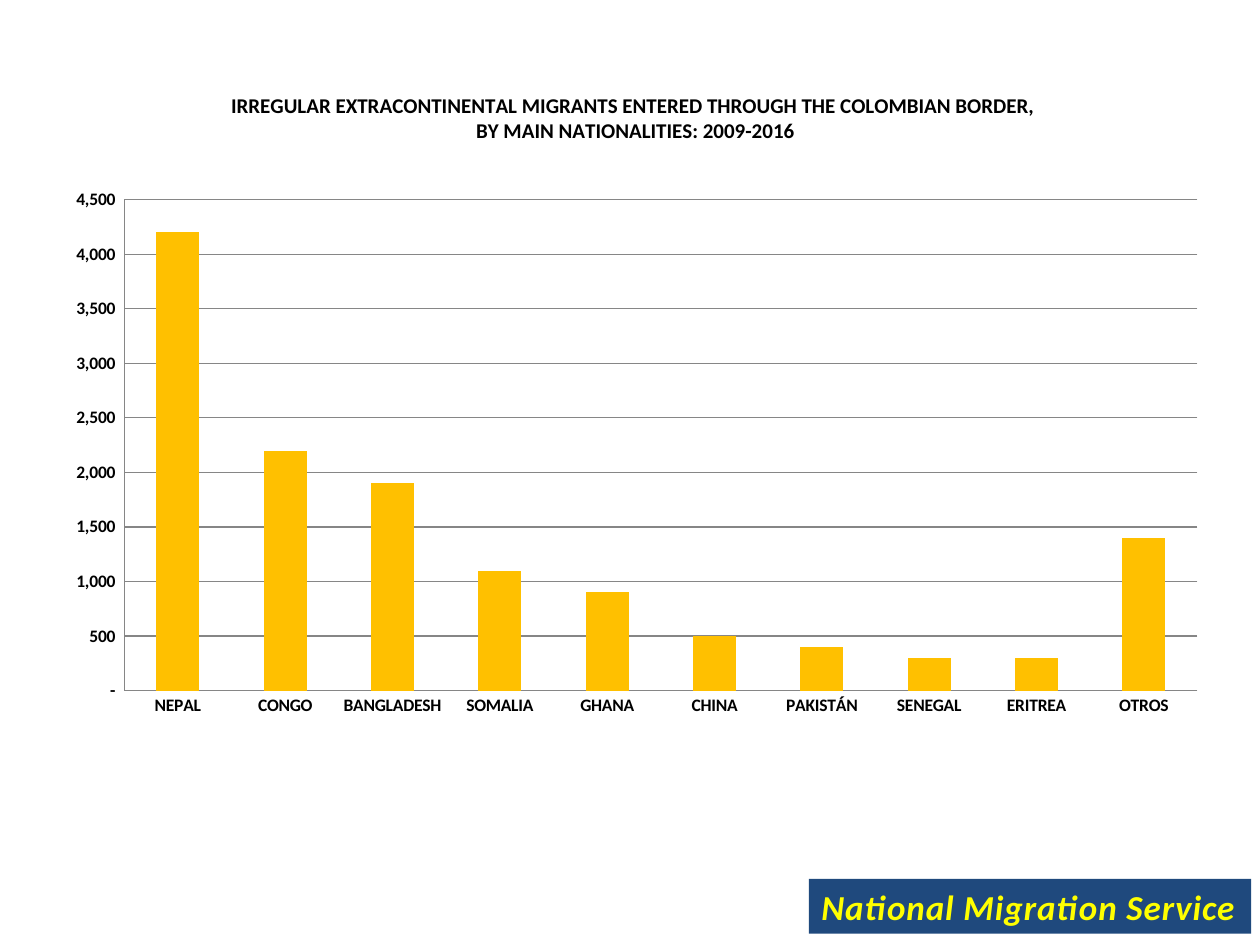
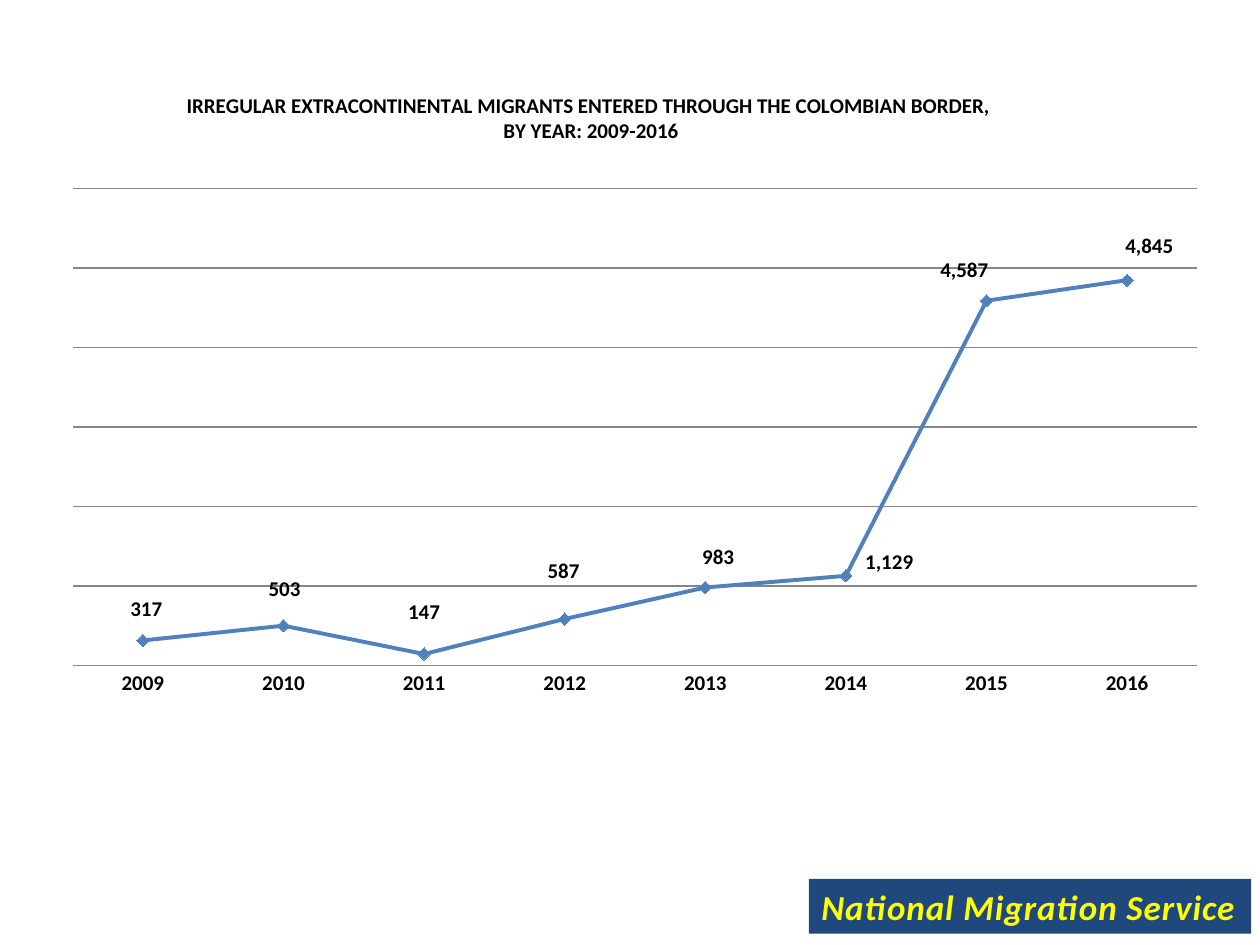
import pptx
import pptx.chart.data
import pptx.dml.color
import pptx.enum.chart
import pptx.enum.shapes
import pptx.enum.text
import pptx.oxml
import pptx.oxml.ns
import pptx.util

RGBColor = pptx.dml.color.RGBColor
BLACK = RGBColor(0x00, 0x00, 0x00)
GRID_GREY = RGBColor(0x86, 0x86, 0x86)
GOLD = RGBColor(0xFF, 0xC0, 0x00)
LINE_BLUE = RGBColor(0x4F, 0x81, 0xBD)
BAND_BLUE = RGBColor(0x1F, 0x49, 0x7D)
YELLOW = RGBColor(0xFF, 0xFF, 0x00)
FONT = "Calibri"
AXIS_FORMAT = '_(* #,##0_);_(* \\(#,##0\\);_(* "-"_);_(@_)'
NAMESPACE = pptx.oxml.ns.nsdecls("a")
OUTLINE = f'<a:ln {NAMESPACE} w="12700"><a:solidFill><a:srgbClr val="E78738"/></a:solidFill></a:ln>'
TEXT_SHADOW = (
    f'<a:effectLst {NAMESPACE}><a:outerShdw blurRad="25400" dist="25400" dir="2700000">'
    '<a:srgbClr val="000000"><a:alpha val="40000"/></a:srgbClr></a:outerShdw></a:effectLst>'
)


def write_text(text_frame, text, size=12, color=BLACK, italic=False, align=None):
    """Fill a text frame with bold text, one paragraph per line."""
    for number, line in enumerate(text.split("\n")):
        paragraph = text_frame.add_paragraph() if number else text_frame.paragraphs[0]
        if align is not None:
            paragraph.alignment = align
        run = paragraph.add_run()
        run.text = line
        run.font.size = pptx.util.Pt(size)
        run.font.name = FONT
        run.font.bold = True
        run.font.italic = italic
        run.font.color.rgb = color


def set_layout(element, index, **settings):
    """Give a chart element a manual layout, in shares of the chart's size."""
    for layout in element.xpath("./c:layout"):
        element.remove(layout)
    items = "".join(f'<c:{name} val="{value}"/>' for name, value in settings.items())
    element.insert(index, pptx.oxml.parse_xml(
        f'<c:layout {pptx.oxml.ns.nsdecls("c")}><c:manualLayout>{items}</c:manualLayout></c:layout>'))


presentation = pptx.Presentation()
presentation.slide_width = pptx.util.Inches(10)
presentation.slide_height = pptx.util.Inches(7.5)
WIDTH, HEIGHT = presentation.slide_width, presentation.slide_height

chart_type = pptx.enum.chart.XL_CHART_TYPE
heading = "IRREGULAR EXTRACONTINENTAL MIGRANTS ENTERED THROUGH THE COLOMBIAN BORDER, \n"
chart_pages = [
    dict(
        kind=chart_type.COLUMN_CLUSTERED, title=heading + "BY MAIN NATIONALITIES: 2009-2016",
        height=5.23, title_left=0.152, plot=(0.064, 0.198, 0.916, 0.745),
        maximum=4500, step=500, category_size=10,
        values={"NEPAL": 4200, "CONGO": 2200, "BANGLADESH": 1900, "SOMALIA": 1100, "GHANA": 900,
                "CHINA": 500, "PAKISTÁN": 400, "SENEGAL": 300, "ERITREA": 300, "OTROS": 1400},
    ),
    dict(
        kind=chart_type.LINE_MARKERS, title=heading + "BY YEAR: 2009-2016",
        height=5.08, title_left=0.114, plot=(0.02, 0.186, 0.96, 0.746),
        maximum=6000, step=1000, category_size=12,
        values={"2009": 317, "2010": 503, "2011": 147, "2012": 587,
                "2013": 983, "2014": 1129, "2015": 4587, "2016": 4845},
    ),
]
# Shift of each year's label from its place above the marker, in inches
label_shifts = [(0.03, -0.06), (0.01, -0.1), (0, -0.14), (-0.01, -0.19),
                (0.1, -0.05), (0.34, 0.08), (-0.18, -0.05), (0.18, -0.08)]
CHART_WIDTH = 9.3

for page in chart_pages:
    slide = presentation.slides.add_slide(presentation.slide_layouts[6])
    chart_data = pptx.chart.data.CategoryChartData(number_format="#,##0")
    chart_data.categories = list(page["values"])
    chart_data.add_series("Series 1", list(page["values"].values()))
    chart = slide.shapes.add_chart(
        page["kind"], pptx.util.Inches(0.39), pptx.util.Inches(0.55),
        pptx.util.Inches(CHART_WIDTH), pptx.util.Inches(page["height"]), chart_data).chart
    chart.has_legend = False
    chart.font.name = FONT
    chart.font.size = pptx.util.Pt(10)
    chart.font.color.rgb = BLACK

    chart.has_title = True
    write_text(chart.chart_title.text_frame, page["title"])
    set_layout(chart._chartSpace.xpath("./c:chart/c:title")[0], 1,
               xMode="edge", yMode="edge", x=page["title_left"], y=0.028)
    left, top, width, height = page["plot"]
    set_layout(chart._chartSpace.xpath(".//c:plotArea")[0], 0, layoutTarget="inner",
               xMode="edge", yMode="edge", x=left, y=top, w=width, h=height)

    value_axis, category_axis = chart.value_axis, chart.category_axis
    value_axis.minimum_scale = 0
    value_axis.maximum_scale = page["maximum"]
    value_axis.major_unit = page["step"]
    value_axis.tick_labels.number_format = AXIS_FORMAT
    value_axis.tick_labels.number_format_is_linked = False
    value_axis.has_major_gridlines = True
    value_axis.major_gridlines.format.line.color.rgb = GRID_GREY
    value_axis.major_gridlines.format.line.width = pptx.util.Pt(0.75)
    for axis, size in ((value_axis, 10), (category_axis, page["category_size"])):
        axis.major_tick_mark = pptx.enum.chart.XL_TICK_MARK.NONE
        axis.format.line.color.rgb = GRID_GREY
        axis.format.line.width = pptx.util.Pt(0.75)
        axis.tick_labels.font.size = pptx.util.Pt(size)
        axis.tick_labels.font.bold = True

    plot = chart.plots[0]
    plot.vary_by_categories = False
    series = plot.series[0]
    if page["kind"] == chart_type.COLUMN_CLUSTERED:
        plot.gap_width = 150
        series.format.fill.solid()
        series.format.fill.fore_color.rgb = GOLD
    else:
        value_axis.visible = False
        series.smooth = False
        series.format.line.color.rgb = LINE_BLUE
        series.format.line.width = pptx.util.Pt(2.25)
        series.marker.style = pptx.enum.chart.XL_MARKER_STYLE.DIAMOND
        series.marker.size = 7
        series.marker.format.fill.solid()
        series.marker.format.fill.fore_color.rgb = LINE_BLUE
        series.marker.format.line.color.rgb = LINE_BLUE
        series.data_labels.show_value = True
        series.data_labels.font.size = pptx.util.Pt(12)
        series.data_labels.font.bold = True
        for leader_lines in chart._chartSpace.xpath(".//c:showLeaderLines"):
            leader_lines.set("val", "0")
        for index, (right, down) in enumerate(label_shifts):
            label = series.points[index].data_label
            label.font.size = pptx.util.Pt(12)
            label.font.bold = True
            label.position = pptx.enum.chart.XL_LABEL_POSITION.ABOVE
            set_layout(chart._chartSpace.xpath(".//c:dLbl")[index], 1,
                       x=round(right / CHART_WIDTH, 3), y=round(down / page["height"], 3))

    band = slide.shapes.add_shape(
        pptx.enum.shapes.MSO_SHAPE.RECTANGLE, int(WIDTH * 0.642), int(HEIGHT * 0.93),
        int(WIDTH * 0.351), int(HEIGHT * 0.058))
    band.shadow.inherit = False
    band.fill.solid()
    band.fill.fore_color.rgb = BAND_BLUE
    band.line.fill.background()
    band.text_frame.word_wrap = False
    band.text_frame.auto_size = pptx.enum.text.MSO_AUTO_SIZE.SHAPE_TO_FIT_TEXT
    write_text(band.text_frame, "National Migration Service", size=20, color=YELLOW,
               italic=True, align=pptx.enum.text.PP_ALIGN.LEFT)
    run_format = band.text_frame.paragraphs[0].runs[0].font._element
    run_format.set("spc", "50")
    run_format.insert(0, pptx.oxml.parse_xml(OUTLINE))
    run_format.xpath("./a:solidFill")[0].addnext(pptx.oxml.parse_xml(TEXT_SHADOW))

presentation.save("out.pptx")
